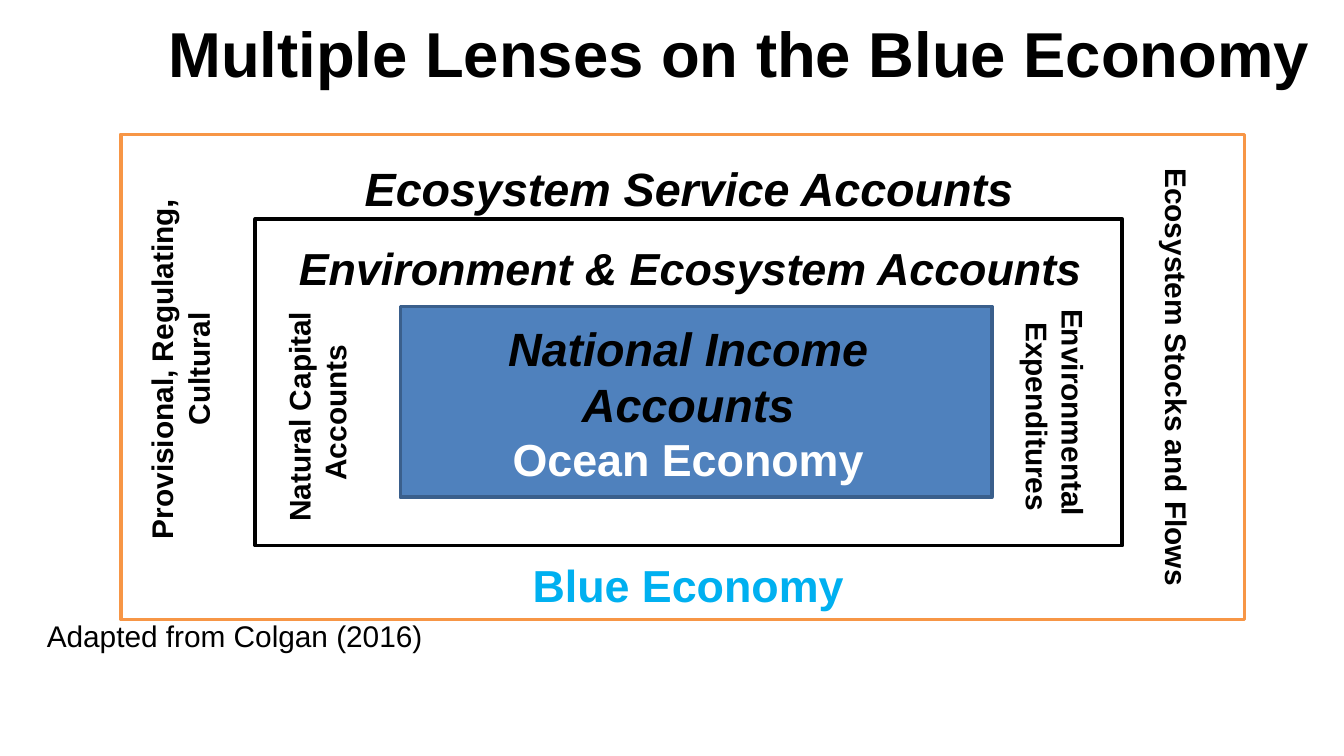
from dataclasses import dataclass

import pptx
import pptx.dml.color
import pptx.enum.shapes
import pptx.enum.text
import pptx.util
from pptx.util import Inches

ALIGN = pptx.enum.text.PP_ALIGN
ANCHOR = pptx.enum.text.MSO_ANCHOR
WIDTH = 10


@dataclass
class Frame:
    box: tuple[float, float, float, float]
    fill: str
    line: str


@dataclass
class Run:
    text: str
    size: float = 16
    color: str = "000000"
    bold: bool = True
    italic: bool = False


@dataclass
class Label:
    box: tuple[float, float, float, float]
    lines: list[list[Run]]
    turn: int = 0
    wrap: bool = True
    align: ALIGN = ALIGN.CENTER
    anchor: ANCHOR = ANCHOR.TOP


FRAMES = [
    Frame((0.9, 1, 8.36, 3.61), "FFFFFF", "F79646"),
    Frame((1.9, 1.63, 6.45, 2.43), "FFFFFF", "000000"),
    Frame((2.98, 2.28, 4.4, 1.42), "4F81BD", "3A5F8C"),
]

LABELS = [
    Label((1, 0.1, 9, 0.58), [[Run("Multiple Lenses on the Blue Economy", 34)]],
          anchor=ANCHOR.MIDDLE),
    Label((2.94, 2.33, 4.36, 1.36),
          [[Run("National Income Accounts", 25, italic=True)],
           [Run("Ocean Economy", 24, "FFFFFF")]]),
    Label((2.58, 1.14, 5.09, 0.53),
          [[Run("Ecosystem Service Accounts", 25, italic=True)]], wrap=False),
    Label((-0.49, 2.41, 3.63, 0.67),
          [[Run("Provisional, Regulating"), Run(", ", 18), Run("Cultural")]], turn=270),
    Label((6.97, 2.75, 1.76, 0.64),
          [[Run("Environmental")], [Run(" Expenditures")]], turn=90, wrap=False),
    Label((1.91, 1.74, 6.45, 0.53),
          [[Run("Environment & Ecosystem Accounts", 24, italic=True)]]),
    Label((1.33, 2.75, 2.06, 0.64),
          [[Run("Natural Capital ")], [Run("Accounts")]], turn=270),
    Label((3.85, 4.1, 2.54, 0.51), [[Run("Blue Economy", 24, "00B0F0")]], wrap=False),
    Label((6.85, 2.62, 3.81, 0.37), [[Run("Ecosystem Stocks and Flows")]], turn=90),
    Label((0.25, 4.55, 3.03, 0.37), [[Run("Adapted from Colgan (2016)", bold=False)]],
          wrap=False, align=ALIGN.LEFT),
]


def paint(target, color: str) -> None:
    """Set a colour format from a hex string."""
    target.rgb = pptx.dml.color.RGBColor.from_string(color)


def draw_frame(slide, frame: Frame) -> None:
    shape = slide.shapes.add_shape(
        pptx.enum.shapes.MSO_SHAPE.RECTANGLE, *map(Inches, frame.box))
    shape.shadow.inherit = False
    shape.fill.solid()
    paint(shape.fill.fore_color, frame.fill)
    paint(shape.line.color, frame.line)
    shape.line.width = pptx.util.Pt(2)


def draw_label(slide, label: Label) -> None:
    shape = slide.shapes.add_textbox(*map(Inches, label.box))
    shape.rotation = label.turn
    body = shape.text_frame
    body.word_wrap = label.wrap
    body.vertical_anchor = label.anchor
    for i, line in enumerate(label.lines):
        para = body.add_paragraph() if i else body.paragraphs[0]
        para.alignment = label.align
        for part in line:
            run = para.add_run()
            run.text = part.text
            run.font.name = "Arial"
            run.font.size = pptx.util.Pt(part.size)
            run.font.bold = part.bold
            run.font.italic = part.italic
            paint(run.font.color, part.color)


def main() -> None:
    deck = pptx.Presentation()
    deck.slide_width = Inches(WIDTH)
    deck.slide_height = Inches(WIDTH * 9 / 16)
    slide = deck.slides.add_slide(deck.slide_layouts[6])
    for frame in FRAMES:
        draw_frame(slide, frame)
    for label in LABELS:
        draw_label(slide, label)
    deck.save("out.pptx")


if __name__ == "__main__":
    main()
